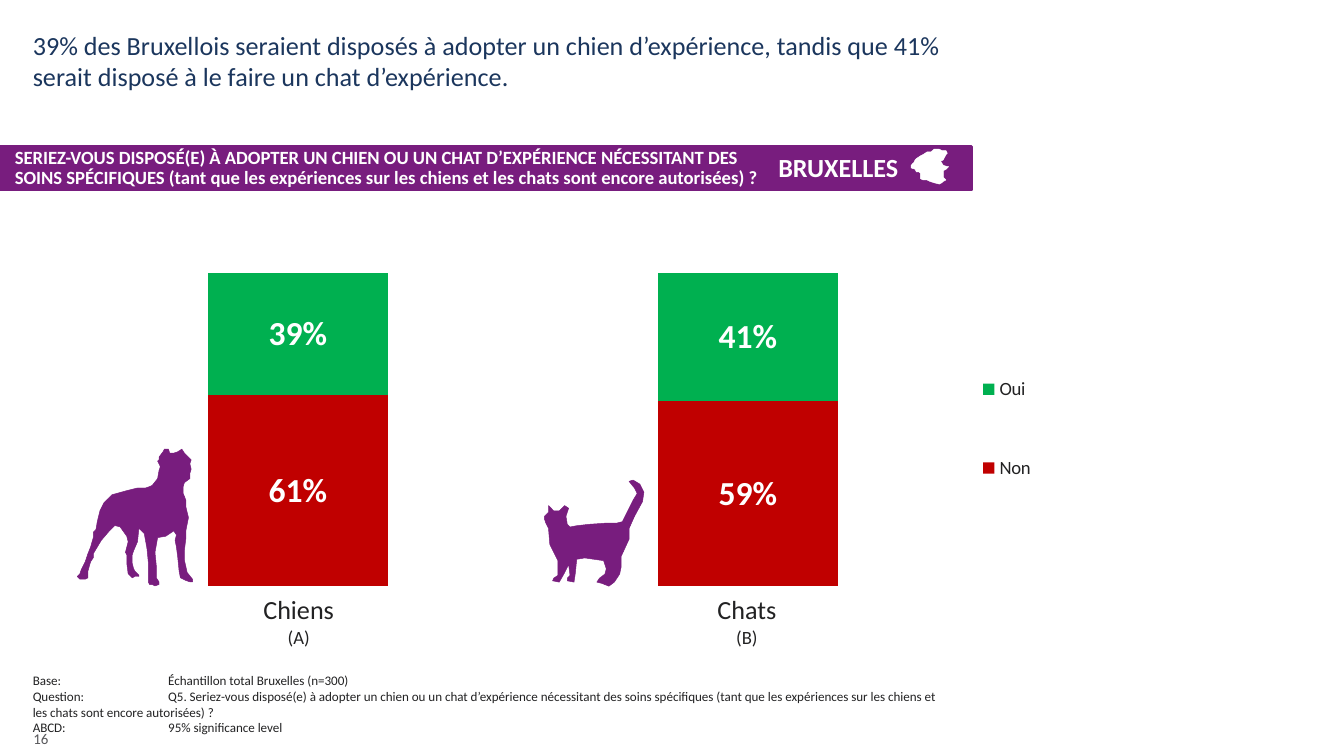
import pptx
import pptx.chart.data
import pptx.dml.color
import pptx.enum.chart
import pptx.enum.shapes
import pptx.enum.text
import pptx.util
from lxml import etree

Cm, Pt = pptx.util.Cm, pptx.util.Pt
RGBColor = pptx.dml.color.RGBColor
Align = pptx.enum.text.PP_ALIGN

FONT = "Calibri"
PURPLE = RGBColor(0x78, 0x1D, 0x7E)
NAVY = RGBColor(0x1B, 0x36, 0x5D)
INK = RGBColor(0x22, 0x22, 0x23)
GREY = RGBColor(0x58, 0x58, 0x5B)
WHITE = RGBColor(0xFF, 0xFF, 0xFF)
RED = RGBColor(0xC0, 0x00, 0x00)
GREEN = RGBColor(0x00, 0xB0, 0x50)

# Outlines: points on a grid whose width comes first.
DOG = 86, [
    (84, 99), (86, 99), (86, 97), (82, 92), (80, 83), (80, 75), (81, 67), (81, 61), (83, 51), (81, 43), (81, 38),
    (79, 33), (79, 28), (80, 25), (84, 22), (84, 18), (85, 15), (84, 11), (85, 8), (82, 5), (80, 3), (78, 0), (75, 2),
    (72, 3), (69, 3), (68, 0), (65, 0), (64, 2), (61, 6), (61, 8), (60, 9), (62, 13), (61, 16), (60, 22), (56, 27),
    (54, 28), (51, 29), (45, 29), (37, 31), (26, 34), (20, 40), (17, 46), (15, 54), (14, 60), (12, 62), (12, 66),
    (10, 73), (8, 78), (6, 84), (3, 90), (2, 93), (0, 95), (2, 97), (6, 97), (8, 96), (8, 91), (10, 84), (12, 81),
    (12, 78), (18, 68), (24, 61), (28, 57), (32, 58), (37, 65), (38, 69), (36, 77), (37, 79), (37, 85), (38, 93),
    (41, 96), (43, 95), (46, 95), (46, 94), (43, 91), (42, 89), (41, 85), (41, 79), (42, 76), (45, 69), (46, 59),
    (50, 63), (52, 74), (53, 84), (53, 99), (54, 101), (56, 101), (58, 102), (61, 101), (61, 99), (59, 96), (59, 87),
    (58, 77), (60, 66), (66, 65), (72, 61), (74, 64), (73, 68), (74, 73), (75, 81), (76, 91), (77, 96), (81, 98)]
CAT = 76, [
    (45, 71), (46, 67), (44, 61), (37, 60), (30, 59), (24, 60), (23, 70), (22, 77), (17, 76), (17, 74), (19, 72),
    (18, 64), (15, 70), (11, 77), (6, 76), (7, 74), (10, 72), (10, 61), (4, 49), (3, 37), (1, 33), (0, 30), (0, 28),
    (3, 25), (3, 20), (7, 24), (11, 24), (15, 20), (18, 22), (16, 28), (17, 34), (19, 36), (24, 35), (33, 34),
    (47, 33), (54, 33), (58, 32), (66, 16), (69, 11), (67, 7), (63, 2), (66, 1), (71, 4), (74, 10), (73, 17),
    (67, 28), (63, 37), (63, 45), (57, 58), (57, 66), (56, 71), (52, 77), (48, 80), (43, 78), (39, 77), (41, 74)]
MAP = 28, [
    (3, 8), (2, 10), (1, 11), (0, 12), (0, 14), (3, 15), (4, 17), (6, 17), (7, 18), (7, 22), (9, 23), (12, 23),
    (14, 24), (17, 25), (21, 26), (23, 25), (24, 24), (26, 23), (24, 21), (24, 16), (26, 15), (28, 13), (27, 13),
    (24, 12), (22, 9), (24, 8), (25, 6), (26, 4), (27, 3), (26, 1), (23, 1), (21, 0), (17, 0), (15, 2), (12, 2),
    (9, 4), (7, 5), (4, 7)]


def style(font, size, color, bold=False):
    font.name, font.size, font.bold = FONT, Pt(size), bold
    font.color.rgb = color


def add_text(slide, box, text, size, color, bold=False, inset=True):
    frame = slide.shapes.add_textbox(*box).text_frame
    frame.word_wrap = True
    if not inset:
        frame.margin_left = frame.margin_right = frame.margin_top = frame.margin_bottom = 0
    frame.text = text
    for para in frame.paragraphs:
        for run in para.runs:
            style(run.font, size, color, bold)
    return frame


def add_icon(slide, left, top, width, icon, color):
    """Draw an outline scaled to the given width."""
    grid, points = icon
    pen = slide.shapes.build_freeform(*points[0], scale=width / grid)
    pen.add_line_segments(points[1:], close=True)
    shape = pen.convert_to_shape(left, top)
    shape.shadow.inherit = False
    shape.fill.solid()
    shape.fill.fore_color.rgb = shape.line.color.rgb = color
    shape.line.width = Pt(0.25)


def add_banner(slide, left, top, width, height):
    bar = slide.shapes.add_shape(pptx.enum.shapes.MSO_SHAPE.RECTANGLE, left, top, width, height)
    bar.shadow.inherit = False
    bar.fill.solid()
    bar.fill.fore_color.rgb = bar.line.color.rgb = PURPLE
    bar.line.width = Pt(2)

    city = add_text(slide, (left + Cm(12.61), top + Cm(0.1), Cm(4.37), Cm(0.61)), "BRUXELLES", 14, WHITE, True, False)
    city.paragraphs[0].alignment = Align.RIGHT
    add_icon(slide, left + Cm(17.22), top + Cm(0.05), Cm(0.71), MAP, WHITE)

    ask = add_text(
        slide, (left + Cm(0.28), top + Cm(0.03), Cm(14.33), Cm(0.99)),
        "SERIEZ-VOUS DISPOSÉ(E) À ADOPTER UN CHIEN OU UN CHAT D’EXPÉRIENCE NÉCESSITANT DES SOINS SPÉCIFIQUES "
        "(tant que les expériences sur les chiens et les chats sont encore autorisées) ?", 10, WHITE, True, False)
    ask.paragraphs[0].line_spacing = 0.9


def set_layout(part, x, y, w, h, inner=False):
    """Fix a plot area or legend at percentages of the chart's size."""
    uri = part.nsmap["c"]
    for old in part.findall(f"{{{uri}}}layout"):
        part.remove(old)
    layout = etree.Element(f"{{{uri}}}layout")
    manual = etree.SubElement(layout, f"{{{uri}}}manualLayout")
    pairs = [("layoutTarget", "inner")] if inner else []
    pairs += [("xMode", "edge"), ("yMode", "edge")]
    pairs += [("x", x / 100), ("y", y / 100), ("w", w / 100), ("h", h / 100)]
    for tag, val in pairs:
        etree.SubElement(manual, f"{{{uri}}}{tag}").set("val", str(val))
    part.insert(0 if inner else 1, layout)


def add_bars(slide, left, top, width, height):
    data = pptx.chart.data.CategoryChartData(number_format=r"0\%")
    data.categories = ["1", "2"]
    data.add_series("Non", [61, 59])
    data.add_series("Oui", [39, 41])
    kind = pptx.enum.chart.XL_CHART_TYPE.COLUMN_STACKED_100
    chart = slide.shapes.add_chart(kind, left, top, width, height, data).chart
    style(chart.font, 18, INK)
    chart.has_title = chart.category_axis.visible = False
    axis = chart.value_axis
    axis.visible = axis.has_major_gridlines = False
    axis.minimum_scale, axis.maximum_scale = 0, 1

    plot = chart.plots[0]
    plot.gap_width, plot.overlap, plot.vary_by_categories = 150, 100, False
    for series, color in zip(plot.series, (RED, GREEN)):
        series.format.fill.solid()
        series.format.fill.fore_color.rgb = color
        labels = series.data_labels
        labels.show_value = True
        labels.number_format, labels.number_format_is_linked = r"0\%", False
        style(labels.font, 18, WHITE, True)

    chart.has_legend = True
    legend = chart.legend
    legend.position = pptx.enum.chart.XL_LEGEND_POSITION.RIGHT
    legend.include_in_layout = False
    style(legend.font, 10, INK)
    set_layout(chart._chartSpace.chart.plotArea, 2.7, 0, 68.9, 97.4, inner=True)
    set_layout(legend._element, 71.2, 15, 6, 67)


def add_names(slide, left, top, width, height):
    table = slide.shapes.add_table(1, 2, left, top, width, height).table
    table.first_row = table.horz_banding = False
    for cell, text in zip(table.iter_cells(), ("Chiens\v(A)", "Chats\v(B)")):
        cell.fill.background()
        para = cell.text_frame.paragraphs[0]
        para.text, para.alignment = text, Align.CENTER
        for run, size in zip(para.runs, (14, 10)):
            style(run.font, size, INK)


def add_foot(slide, left, top, width, height):
    notes = add_text(
        slide, (left, top, width, height),
        "Base:\tÉchantillon total Bruxelles (n=300)\n"
        "Question:\tQ5. Seriez-vous disposé(e) à adopter un chien ou un chat d’expérience nécessitant des soins "
        "spécifiques (tant que les expériences sur les chiens et \tles chats sont encore autorisées) ?\v"
        "ABCD:\t95% significance level", 7, INK)
    for para in notes.paragraphs:
        props = para._p.get_or_add_pPr()
        uri = props.nsmap["a"]
        tabs = etree.SubElement(props, f"{{{uri}}}tabLst")
        for stop in (Cm(2.56), Cm(17.78)):
            etree.SubElement(tabs, f"{{{uri}}}tab", pos=str(stop), algn="l")
    page = add_text(slide, (left + Cm(0.26), top + height, Cm(0.86), Cm(0.66)), "16", 8, GREY, inset=False)
    page.word_wrap, page.vertical_anchor = False, pptx.enum.text.MSO_ANCHOR.BOTTOM
    page.paragraphs[0].line_spacing = 0.85


def main():
    deck = pptx.Presentation()
    deck.slide_width, deck.slide_height = Cm(25.4), Cm(14.29)
    slide = deck.slides.add_slide(deck.slide_layouts[6])
    add_banner(slide, 0, Cm(2.77), Cm(18.36), Cm(0.81))
    add_text(slide, (Cm(0.62), Cm(0.55), Cm(17.78), Cm(1.5)),
             "39% des Bruxellois seraient disposés à adopter un chien d’expérience, tandis que "
             "41% serait disposé à le faire un chat d’expérience.", 14, NAVY, inset=False)
    add_foot(slide, Cm(0.37), Cm(12.59), Cm(18.03), Cm(0.89))
    add_icon(slide, Cm(1.46), Cm(8.49), Cm(2.18), DOG, PURPLE)
    add_icon(slide, Cm(10.29), Cm(9.05), Cm(1.93), CAT, PURPLE)
    add_bars(slide, Cm(0.71), Cm(5.16), Cm(24.69), Cm(6.07))
    add_names(slide, Cm(1.41), Cm(11.12), Cm(16.94), Cm(1.04))
    deck.save("out.pptx")


if __name__ == "__main__":
    main()
